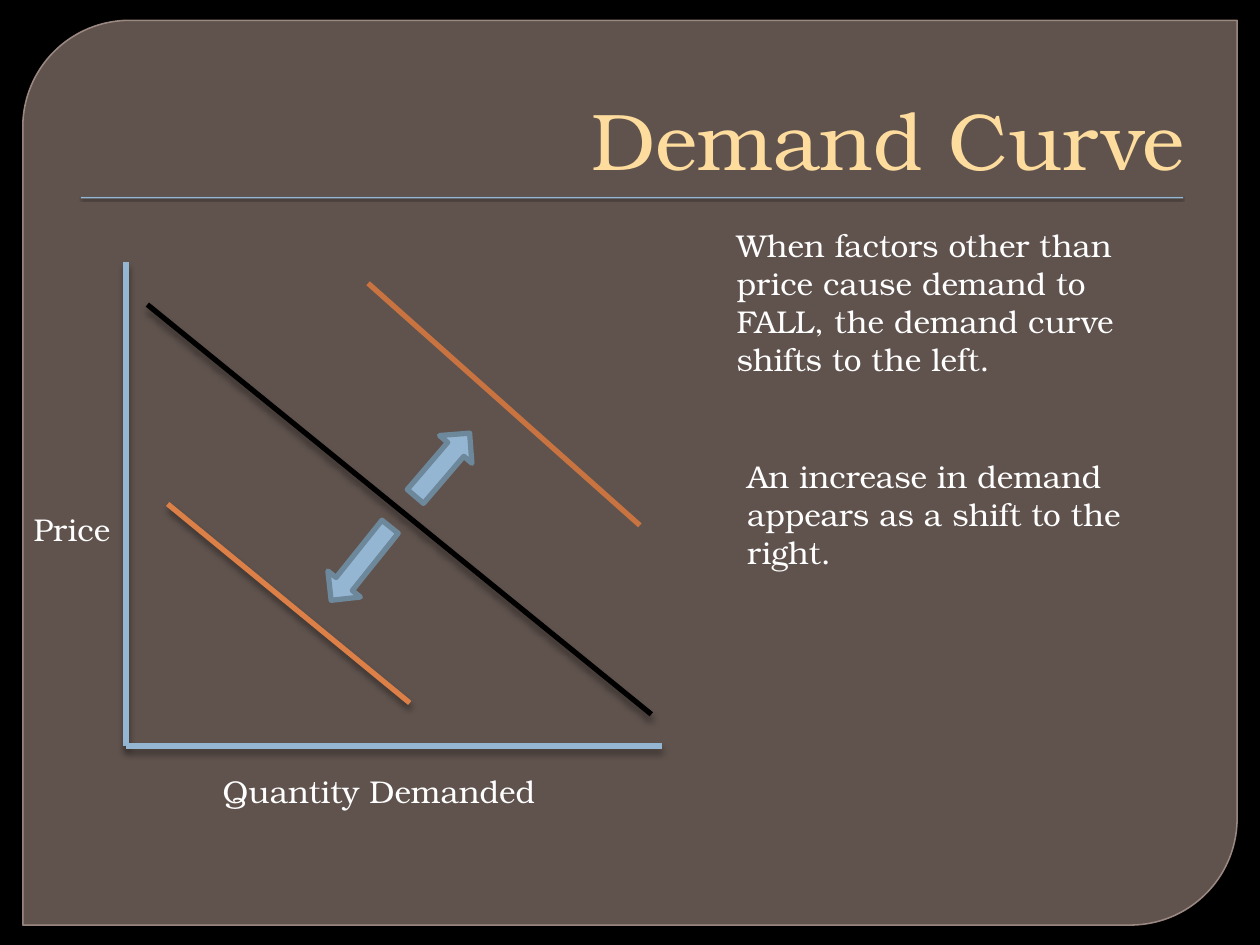
from lxml.etree import SubElement
from pptx import Presentation
from pptx.dml.color import RGBColor
from pptx.enum.shapes import MSO_CONNECTOR, MSO_SHAPE
from pptx.enum.text import MSO_ANCHOR, MSO_AUTO_SIZE, PP_ALIGN
from pptx.oxml.ns import qn
from pptx.util import Cm, Pt

FONT = "TeX Gyre Bonum"
BLUE, WHITE, BLACK = "94B6D2", "FFFFFF", "000000"


def rgb(value):
    return RGBColor.from_string(value)


def set_alpha(fill, percent):
    """Make a solid fill partly transparent."""
    color = fill._xPr.find(qn("a:solidFill"))[0]
    SubElement(color, qn("a:alpha"), val=str(percent * 1000))


def set_shadow(shape, blur=4, dist=3, alpha=43):
    """Add a soft shadow that falls straight down."""
    shape.shadow.inherit = False
    effects = shape._element.spPr.find(qn("a:effectLst"))
    outer = SubElement(effects, qn("a:outerShdw"), blurRad=str(Pt(blur)),
                       dist=str(Pt(dist)), dir="5400000", rotWithShape="0")
    color = SubElement(outer, qn("a:srgbClr"), val=BLACK)
    SubElement(color, qn("a:alpha"), val=str(alpha * 1000))


def add_block(s, kind, box, fill, line=None, width=3):
    sp = s.shapes.add_shape(kind, *map(Cm, box))
    sp.shadow.inherit = False
    sp.fill.solid()
    sp.fill.fore_color.rgb = rgb(fill)
    if line:
        sp.line.color.rgb = rgb(line)
        sp.line.width = Pt(width)
    else:
        sp.line.fill.background()
    return sp


def add_line(s, start, end, color, shadow=True):
    line = s.shapes.add_connector(MSO_CONNECTOR.STRAIGHT, *map(Cm, start + end))
    line.line.color.rgb = rgb(color)
    line.line.width = Pt(3)
    if shadow:
        set_shadow(line)
    else:
        SubElement(line._element.spPr, qn("a:effectLst"))


def write(tf, text, size, color, align=PP_ALIGN.LEFT):
    p = tf.paragraphs[0]
    p.alignment = align
    r = p.add_run()
    r.text = text
    for name, value in {"name": FONT, "size": Pt(size), "bold": False}.items():
        setattr(r.font, name, value)
    r.font.color.rgb = rgb(color)


def add_text(s, box, text):
    tf = s.shapes.add_textbox(*map(Cm, box)).text_frame
    tf.word_wrap = True
    write(tf, text, 18, WHITE)


def add_frame(s, left, top, width, height):
    # Panel with two rounded corners
    panel = add_block(s, MSO_SHAPE.ROUND_2_DIAG_RECTANGLE,
                      (left, top, width, height), "948079", "A9948D", 0.87)
    panel.adjustments[0], panel.adjustments[1] = 0.118, 0
    set_alpha(panel.fill, 65)
    set_alpha(panel.line.fill, 88)
    # Rule under the title
    rule = add_block(s, MSO_SHAPE.RECTANGLE,
                     (left + 1.17, top + 3.56, 22.22, 0.03), BLUE)
    set_shadow(rule, blur=1, dist=1, alpha=75)


def add_title(s, box, text):
    title = s.shapes.title
    s.shapes._spTree.append(title._element)  # in front of the panel
    for name, value in zip(("left", "top", "width", "height"), box):
        setattr(title, name, Cm(value))
    tf = title.text_frame
    for name, value in {"auto_size": MSO_AUTO_SIZE.NONE, "word_wrap": True,
                        "vertical_anchor": MSO_ANCHOR.BOTTOM}.items():
        setattr(tf, name, value)
    write(tf, text, 46, "FDDC9E", PP_ALIGN.RIGHT)


def add_diagram(s, left, top, width, height):
    def at(x, y):
        return left + x, top + y

    # Axes
    add_line(s, at(0, 0), at(0, height), BLUE)
    add_line(s, at(0, height), at(width, height), BLUE)
    # Axis labels
    add_text(s, at(-2.11, height / 2) + (2.74, 1.02), "Price")
    add_text(s, at(1.7, height + 0.4) + (8.89, 1.02), "Quantity Demanded")
    # Demand curve, then its shifts to the left and to the right
    for start, end, color, shadow in (
        ((0.43, 0.86), (10.59, 9.12), BLACK, True),
        ((0.84, 4.88), (5.72, 8.89), "DD8047", True),
        ((4.88, 0.43), (10.36, 5.31), "C97440", False),
    ):
        add_line(s, at(*start), at(*end), color, shadow)
    # Shift arrows
    for corner, size, angle in (
        ((3.78, 5.66), (1.9, 0.84), 308.7),
        ((5.54, 3.66), (1.68, 0.86), 130.6),
    ):
        arrow = add_block(s, MSO_SHAPE.LEFT_ARROW, at(*corner) + size,
                          BLUE, "6D879B")
        arrow.rotation = angle


def add_notes_column(s, left, top, width):
    add_text(s, (left, top, width, 3.33),
             "When factors other than price cause demand to FALL, "
             "the demand curve shifts to the left.")
    add_text(s, (left + 0.21, top + 4.65, width + 0.2, 1.8),
             "An increase in demand appears as a shift to the right.")


def main():
    prs = Presentation()
    prs.slide_width, prs.slide_height = Cm(25.4), Cm(19.05)
    s = prs.slides.add_slide(prs.slide_layouts[5])
    s.background.fill.solid()
    s.background.fill.fore_color.rgb = rgb(BLACK)
    add_frame(s, 0.46, 0.41, 24.48, 18.24)
    add_title(s, (1.27, 0.71, 22.86, 3.18), "Demand Curve")
    add_diagram(s, 2.54, 5.28, 10.8, 9.76)
    add_notes_column(s, 14.6, 4.44, 8.89)
    prs.save("out.pptx")


if __name__ == "__main__":
    main()
